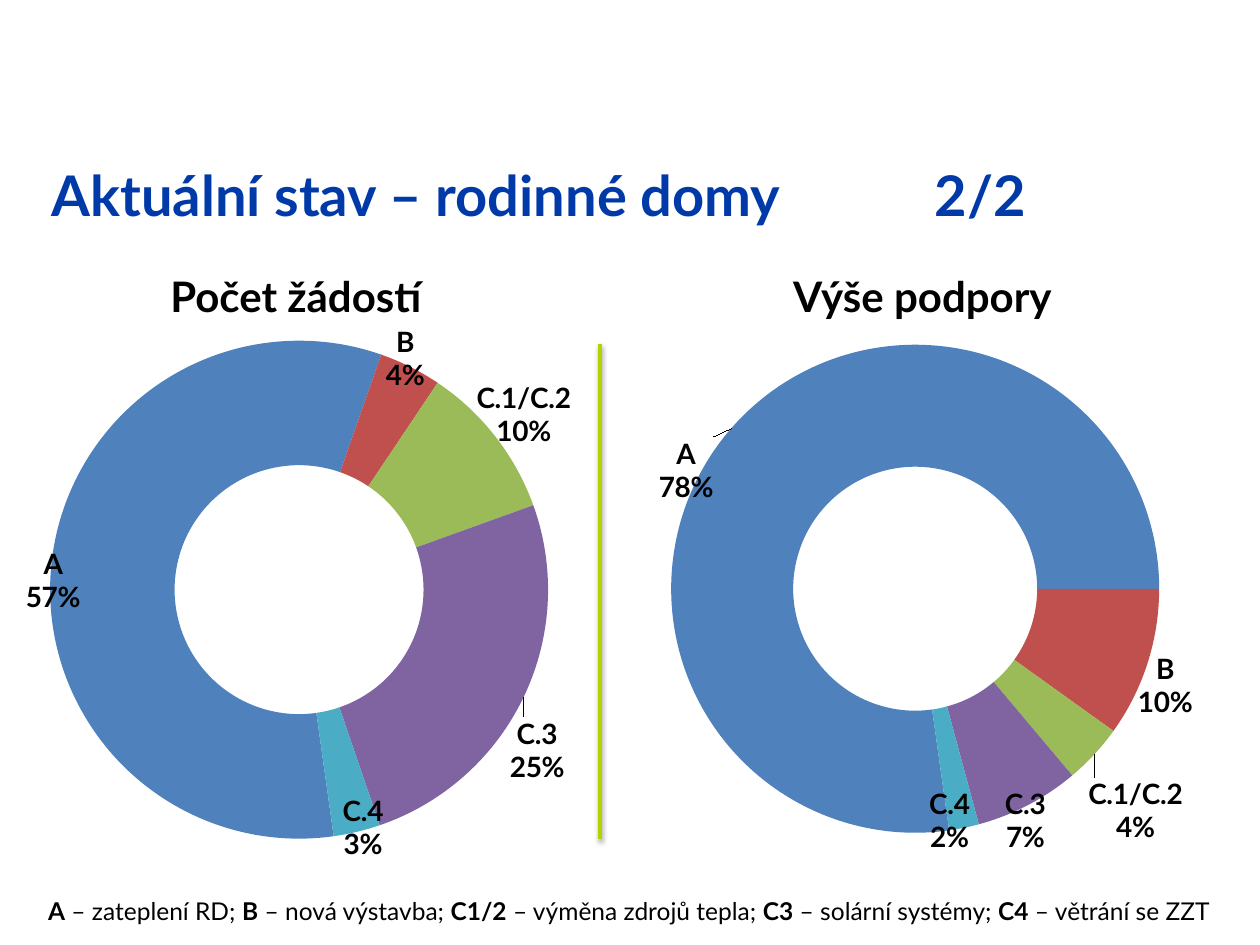
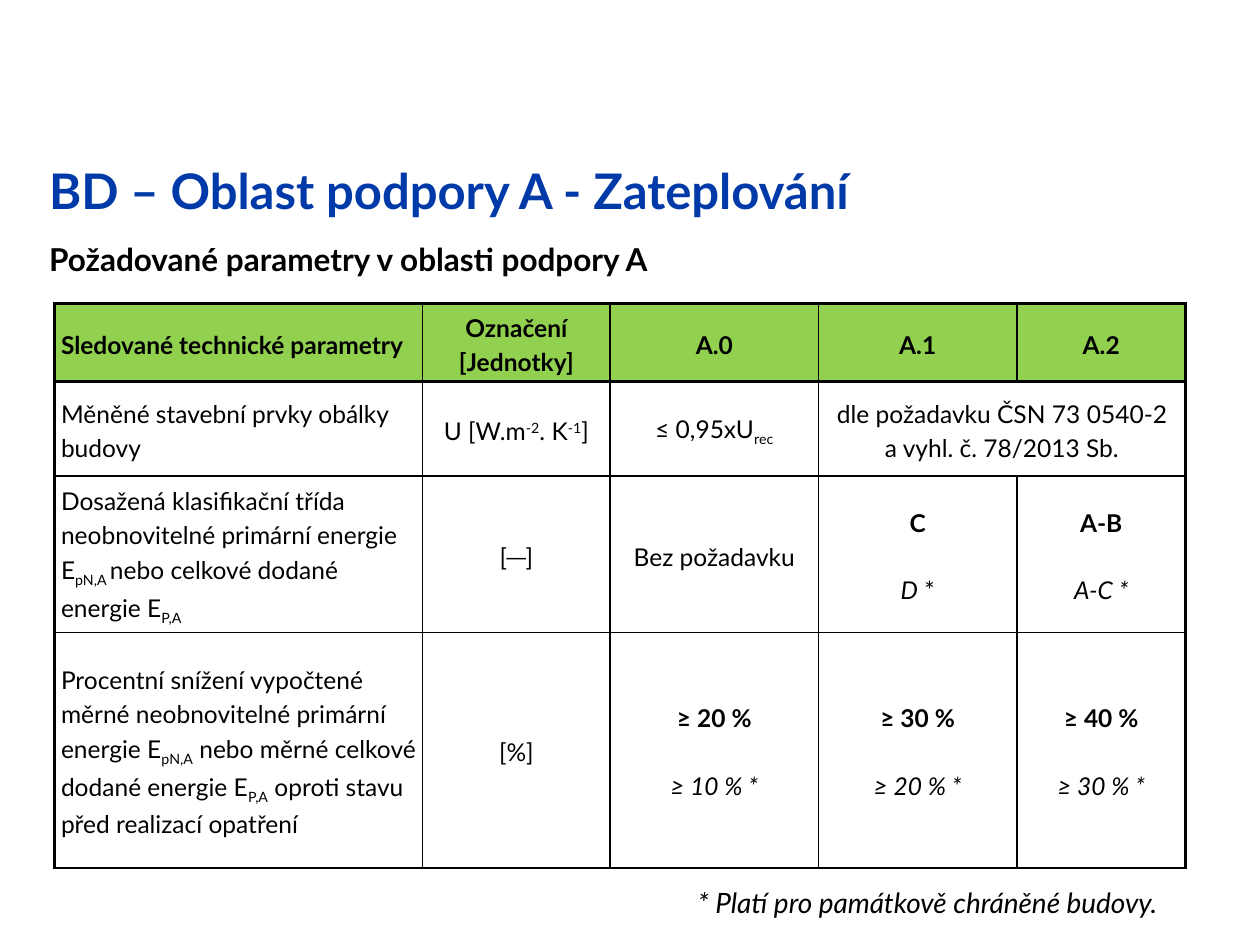
from copy import deepcopy
from math import cos, radians, sin

from pptx import Presentation
from pptx.chart.data import CategoryChartData
from pptx.dml.color import RGBColor
from pptx.enum.chart import XL_CHART_TYPE
from pptx.enum.shapes import MSO_CONNECTOR
from pptx.enum.text import MSO_ANCHOR, PP_ALIGN
from pptx.oxml import parse_xml
from pptx.oxml.ns import nsdecls
from pptx.util import Cm, Pt

LEFT, CENTER = PP_ALIGN.LEFT, PP_ALIGN.CENTER
MIDDLE = MSO_ANCHOR.MIDDLE
DOUGHNUT = XL_CHART_TYPE.DOUGHNUT
STRAIGHT = MSO_CONNECTOR.STRAIGHT
rgb = RGBColor.from_string

FONT = "Lato"
BLUE, BLACK, LIME, GREEN = "003AA9", "000000", "B3D200", "92D050"
SLICE_COLORS = ["4F81BD", "C0504D", "9BBB59", "8064A2", "4BACC6"]
START_ANGLE = 172


def write_runs(p, runs, size, color=BLACK, align=LEFT):
    p.alignment = align
    for text, style in runs:
        r = p.add_run()
        r.text = text
        r.font.name = FONT
        r.font.size = Pt(size)
        r.font.bold = "b" in style
        r.font.italic = "i" in style
        r.font.color.rgb = rgb(color)
        if "^" in style:
            r.font._element.set("baseline", "30000")
        if "_" in style:
            r.font._element.set("baseline", "-25000")


def add_text(s, box, runs, size, color=BLACK, align=LEFT):
    sp = s.shapes.add_textbox(*[Cm(v) for v in box])
    tf = sp.text_frame
    tf.word_wrap = True
    write_runs(tf.paragraphs[0], runs, size, color, align)
    return tf


prs = Presentation()
prs.slide_width, prs.slide_height = Cm(25.4), Cm(19.05)
blank = prs.slide_layouts[6]

s = prs.slides.add_slide(blank)
tf = add_text(s, (0.79, 3.12, 23.9, 2.21),
              [("Aktuální stav – rodinné domy\t2/2", "b")], 32, BLUE)
tf.paragraphs[0]._p.get_or_add_pPr().append(parse_xml(
    f'<a:tabLst {nsdecls("a")}><a:tab pos="{Cm(17.8)}" algn="l"/></a:tabLst>'))

legend = [
    ("A", "b"), (" – zateplení RD; ", ""),
    ("B", "b"), (" – nová výstavba; ", ""),
    ("C1/2", "b"), (" – výměna zdrojů tepla; ", ""),
    ("C3", "b"), (" – solární systémy; ", ""),
    ("C4", "b"), (" – větrání se ZZT", ""),
]
add_text(s, (0.18, 17.93, 25, 0.86), legend, 14, align=CENTER)

divider = s.shapes.add_connector(STRAIGHT, Cm(12.1), Cm(6.93), Cm(12.1), Cm(16.92))
divider.line.color.rgb = rgb(LIME)
divider.line.width = Pt(2)
divider._element.spPr.append(parse_xml(
    f'<a:effectLst {nsdecls("a")}>'
    f'<a:outerShdw blurRad="{Pt(3.1)}" dist="{Pt(1.6)}" dir="5400000" rotWithShape="0">'
    f'<a:srgbClr val="{BLACK}"><a:alpha val="38000"/></a:srgbClr>'
    '</a:outerShdw></a:effectLst>'))

categories = ["A", "B", "C.1/C.2", "C.3", "C.4"]
doughnuts = [
    ("Počet žádostí", 0.86, (0.51, 6.53, 11, 10.8), (6.03, 11.89), 5.02,
     [57, 4, 10, 25, 3],
     [(-4.96, -0.2), (2.14, -4.68), (4.54, -3.55), (4.8, 3.23), (1.29, 4.8)]),
    ("Výše podpory", 13.49, (12.09, 6.6, 12.7, 10.59), (18.45, 11.87), 4.92,
     [78, 10, 4, 7, 2],
     [(-4.62, -2.4), (5.04, 1.94), (4.44, 4.46), (2.22, 4.7), (0.69, 4.7)]),
]
for heading, heading_left, box, center, radius, values, label_centers in doughnuts:
    left, top, width, height = box
    data = CategoryChartData(number_format="#,##0")
    data.categories = categories
    data.add_series("Series 1", values)
    chart = s.shapes.add_chart(DOUGHNUT, *[Cm(v) for v in box], data).chart
    chart.has_legend = False
    chart.has_title = False
    chart.font.name = "Calibri"
    chart.font.size = Pt(10)
    chart.font.color.rgb = rgb(BLACK)

    plot_area = chart._chartSpace.xpath("c:chart/c:plotArea")[0]
    for layout in plot_area.xpath("c:layout"):
        plot_area.remove(layout)
    plot_area.insert(0, parse_xml(
        f'<c:layout {nsdecls("c")}><c:manualLayout><c:layoutTarget val="inner"/>'
        '<c:xMode val="edge"/><c:yMode val="edge"/>'
        f'<c:x val="{(center[0] - radius - left) / width:.4f}"/>'
        f'<c:y val="{(center[1] - radius - top) / height:.4f}"/>'
        f'<c:w val="{2 * radius / width:.4f}"/><c:h val="{2 * radius / height:.4f}"/>'
        '</c:manualLayout></c:layout>'))
    plot_area.xpath(".//c:firstSliceAng")[0].set("val", str(START_ANGLE))
    plot_area.xpath(".//c:holeSize")[0].set("val", "50")

    plot = chart.plots[0]
    plot.vary_by_categories = True
    series = plot.series[0]
    labels = series.data_labels
    labels.show_value = True
    labels.show_category_name = True
    labels.number_format = '0"%"'
    labels.number_format_is_linked = False
    labels.font.name = FONT
    labels.font.size = Pt(16)
    labels.font.bold = True
    labels.font.color.rgb = rgb(BLACK)
    dLbls = labels._element
    dLbls.xpath("c:showBubbleSize")[0].addnext(parse_xml(
        f'<c:separator {nsdecls("c")}>\n</c:separator>'))
    shared = [e for e in dLbls if not e.tag.endswith("showLeaderLines")]

    angle = START_ANGLE
    for i, (value, (x, y)) in enumerate(zip(values, label_centers)):
        fmt = series.points[i].format
        fmt.fill.solid()
        fmt.fill.fore_color.rgb = rgb(SLICE_COLORS[i])
        fmt.line.fill.background()
        sweep = 360 * value / sum(values)
        middle = radians(angle + sweep / 2)
        angle += sweep
        dx = (x - 0.75 * radius * sin(middle)) / width
        dy = (y + 0.75 * radius * cos(middle)) / height
        dLbl = parse_xml(
            f'<c:dLbl {nsdecls("c")}><c:idx val="{i}"/><c:layout><c:manualLayout>'
            f'<c:x val="{dx:.4f}"/><c:y val="{dy:.4f}"/>'
            '</c:manualLayout></c:layout></c:dLbl>')
        dLbl.extend(deepcopy(shared))
        dLbls.insert(i, dLbl)

    add_text(s, (heading_left, 5.33, 10.21, 1.27), [(heading, "b")], 24, align=CENTER)

s = prs.slides.add_slide(blank)
add_text(s, (0.74, 3.12, 24.6, 1.8),
         [("BD – Oblast podpory A - Zateplování", "b")], 28, BLUE)
add_text(s, (0.74, 4.72, 13.67, 1.02),
         [("Požadované parametry v\u00a0oblasti podpory A", "b")], 18)

rows = [
    [
        [[("Sledované technické parametry", "b")]],
        [[("Označení", "b")], [("[Jednotky]", "b")]],
        [[("A.0", "b")]],
        [[("A.1", "b")]],
        [[("A.2", "b")]],
    ],
    [
        [[("Měněné stavební prvky obálky budovy", "")]],
        [[("U [W.m", ""), ("-2", "^"), (". K", ""), ("-1", "^"), ("]", "")]],
        [[("≤ 0,95xU", ""), ("rec", "_")]],
        [[("dle požadavku ČSN 73\u00a00540-2", "")], [("a vyhl. č. 78/2013 Sb.", "")]],
        [],
    ],
    [
        [[("Dosažená klasifikační třída neobnovitelné primární energie E", ""),
          ("pN,A ", "_"), ("nebo celkové dodané energie E", ""), ("P,A", "_")]],
        [[("[─]", "")]],
        [[("Bez požadavku", "")]],
        [[("C", "b")], [("D", "i"), (" *", "")]],
        [[("A-B", "b")], [("A-C *", "i")]],
    ],
    [
        [[("Procentní snížení vypočtené měrné neobnovitelné primární energie E", ""),
          ("pN,A", "_"), (" nebo měrné celkové dodané energie E", ""), ("P,A", "_"),
          (" oproti stavu před realizací opatření", "")]],
        [[("[%]", "")]],
        [[("≥ 20 %", "b")], [("≥ 10 % *", "i")]],
        [[("≥ 30 %", "b")], [("≥ 20 % *", "i")]],
        [[("≥ 40 %", "b")], [("≥ 30 % *", "i")]],
    ],
]
col_widths = [7.42, 3.78, 4.2, 4, 3.4]
row_heights = [1.57, 1.91, 3.15, 4.75]
table = s.shapes.add_table(4, 5, Cm(1.1), Cm(6.12), Cm(sum(col_widths)),
                           Cm(sum(row_heights))).table
table.first_row = False
table.horz_banding = False
for col, width in zip(table.columns, col_widths):
    col.width = Cm(width)
for row, height in zip(table.rows, row_heights):
    row.height = Cm(height)
table.cell(1, 3).merge(table.cell(1, 4))

for i, row in enumerate(rows):
    for j, paragraphs in enumerate(row):
        cell = table.cell(i, j)
        cell.vertical_anchor = MIDDLE
        cell.margin_left = cell.margin_right = Cm(0.13)
        cell.margin_top = cell.margin_bottom = 0
        if i == 0:
            cell.fill.solid()
            cell.fill.fore_color.rgb = rgb(GREEN)
        else:
            cell.fill.background()
        tf = cell.text_frame
        for k, runs in enumerate(paragraphs):
            p = tf.add_paragraph() if k else tf.paragraphs[0]
            p.line_spacing = 1.15
            if k and i > 1:
                p.space_before = Pt(19.5)
            write_runs(p, runs, 14, align=CENTER if j else LEFT)
        thick = {"L": j == 0, "R": j == 4 or (i, j) == (1, 3),
                 "T": i < 2, "B": i in (0, 3)}
        tcPr = cell._tc.get_or_add_tcPr()
        for k, (side, is_thick) in enumerate(thick.items()):
            tcPr.insert(k, parse_xml(
                f'<a:ln{side} {nsdecls("a")} w="{Pt(1.5 if is_thick else 1)}">'
                f'<a:solidFill><a:srgbClr val="{BLACK}"/></a:solidFill></a:ln{side}>'))

add_text(s, (13.82, 17.73, 10.21, 0.94),
         [("* Platí pro památkově chráněné budovy.", "i")], 16)

prs.save("out.pptx")
